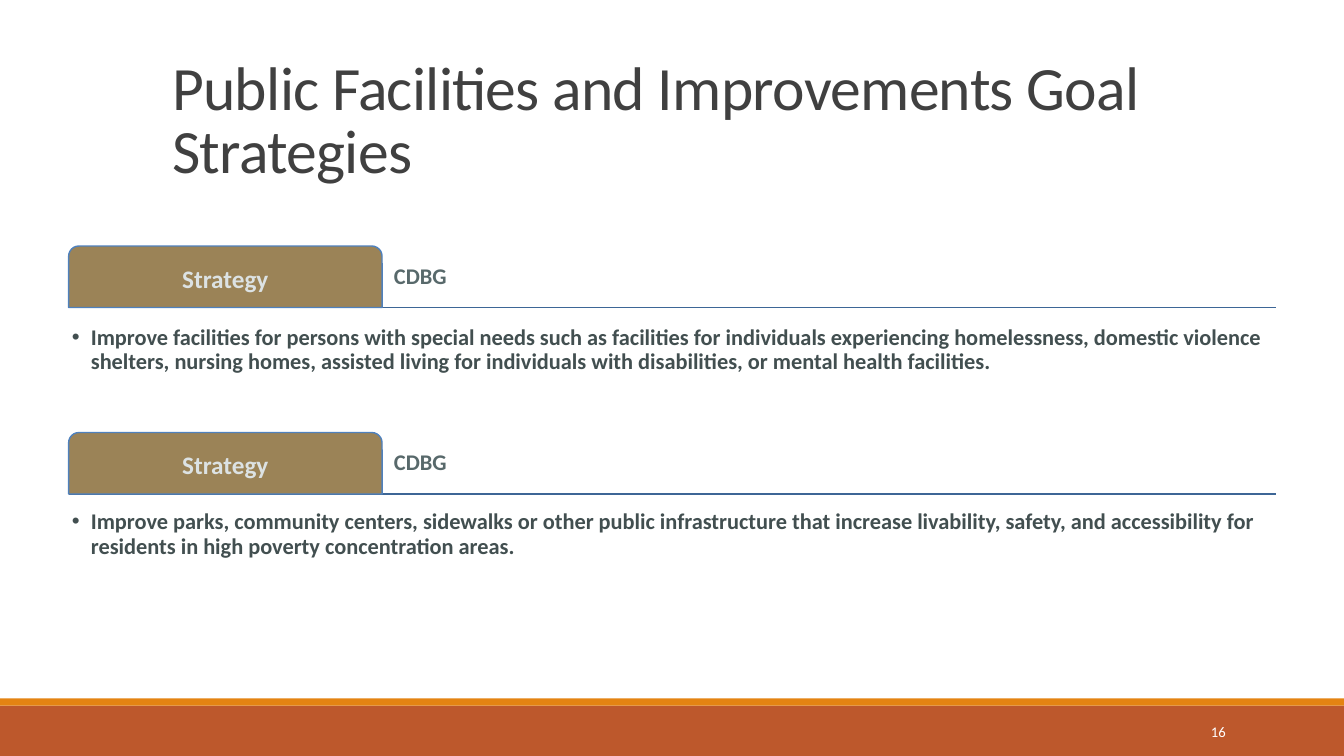
from pptx import Presentation
from pptx.dml.color import RGBColor as RGB
from pptx.enum.shapes import MSO_CONNECTOR as CONN, MSO_SHAPE as SHAPE
from pptx.enum.text import MSO_ANCHOR as ANCHOR, MSO_AUTO_SIZE as FIT, PP_ALIGN as ALIGN
from pptx.util import Cm, Pt
from lxml import etree

COLORS = {
    "band": "BD582C", "strip": "E48312", "tab": "9B8357", "tab_line": "4F81BD",
    "rule": "3D6696", "tab_text": "DCE2E3", "fund": "58696B", "body": "424F50",
    "title": "404040", "white": "FFFFFF",
}
A = "http://schemas.openxmlformats.org/drawingml/2006/main"


def add_text(sp, text, size, color, bold=False, align=ALIGN.LEFT,
             anchor=ANCHOR.MIDDLE, spacing=0.9, after=0, insets=(0.08, 0.08, 0.08, 0.08)):
    tf = sp.text_frame
    tf.word_wrap = True
    tf.auto_size = FIT.NONE
    tf.vertical_anchor = anchor
    tf.margin_left, tf.margin_top, tf.margin_right, tf.margin_bottom = map(Cm, insets)
    p = tf.paragraphs[0]
    p.alignment = align
    p.line_spacing = spacing
    p.space_before, p.space_after = Pt(0), Pt(after)
    r = p.add_run()
    r.text = text
    r.font.name, r.font.size, r.font.bold = "Calibri", Pt(size), bold
    r.font.color.rgb = RGB.from_string(COLORS[color])
    return p


def add_filled(kind, x, y, w, h, color):
    sp = s.shapes.add_shape(kind, Cm(x), Cm(y), Cm(w), Cm(h))
    sp.shadow.inherit = False
    sp.fill.solid()
    sp.fill.fore_color.rgb = RGB.from_string(COLORS[color])
    sp.line.fill.background()
    return sp


prs = Presentation()
prs.slide_width, prs.slide_height = Cm(33.87), Cm(19.05)
s = prs.slides.add_slide(prs.slide_layouts[3])

add_filled(SHAPE.RECTANGLE, 0, 17.78, 33.87, 1.27, "band")
add_filled(SHAPE.RECTANGLE, 0, 17.6, 33.87, 0.18, "strip")

title, *bodies = s.placeholders
title.left, title.top, title.width, title.height = Cm(4.09), Cm(1.4), Cm(25.43), Cm(3.35)
p = add_text(title, "Public Facilities and Improvements Goal Strategies", 44, "title",
             anchor=ANCHOR.TOP, spacing=0.85, insets=(0.25, 0.13, 0.25, 0.13))
p.runs[0].font._element.set("spc", "-50")

LEFT, WIDTH, TAB_W, TAB_H = 1.73, 30.43, 7.9, 1.55
strategies = [
    (6.2, 7.29, "Improve facilities for persons with special needs such as facilities for "
     "individuals experiencing homelessness, domestic violence shelters, nursing homes, "
     "assisted living for individuals with disabilities, or mental health facilities."),
    (10.9, 11.94, "Improve parks, community centers, sidewalks or other public infrastructure "
     "that increase livability, safety, and accessibility for residents in high poverty "
     "concentration areas."),
]

for body, (top, body_top, text) in zip(bodies, strategies):
    rule = s.shapes.add_connector(CONN.STRAIGHT, Cm(LEFT), Cm(top + TAB_H),
                                  Cm(LEFT + WIDTH), Cm(top + TAB_H))
    rule.line.color.rgb = RGB.from_string(COLORS["rule"])
    rule.line.width = Pt(1)
    etree.SubElement(rule._element.spPr, f"{{{A}}}effectLst")

    fund = s.shapes.add_textbox(Cm(LEFT + TAB_W), Cm(top), Cm(WIDTH - TAB_W), Cm(TAB_H))
    add_text(fund, "CDBG", 16, "fund", bold=True, after=7, insets=(0.3, 0.08, 0.08, 0.08))

    tab = add_filled(SHAPE.ROUND_2_SAME_RECTANGLE, LEFT, top, TAB_W, TAB_H, "tab")
    tab.line.color.rgb = RGB.from_string(COLORS["tab_line"])
    tab.line.width = Pt(1)
    add_text(tab, "Strategy", 18, "tab_text", bold=True, align=ALIGN.CENTER, after=8,
             insets=(0.18, 0.18, 0.18, 0.1))

    body.left, body.top, body.width, body.height = Cm(LEFT), Cm(body_top), Cm(WIDTH), Cm(3.07)
    p = add_text(body, text, 16, "body", bold=True, after=3)
    pPr = p._p.get_or_add_pPr()
    pPr.set("marL", str(Cm(0.48)))
    pPr.set("indent", str(Cm(-0.48)))
    etree.SubElement(pPr, f"{{{A}}}buChar", char="•")

number = s.shapes.add_textbox(Cm(27.51), Cm(17.93), Cm(3.63), Cm(1.02))
add_text(number, "16", 10.5, "white", align=ALIGN.RIGHT, spacing=1.0,
         insets=(0.25, 0.13, 0.25, 0.13))

prs.save("out.pptx")
